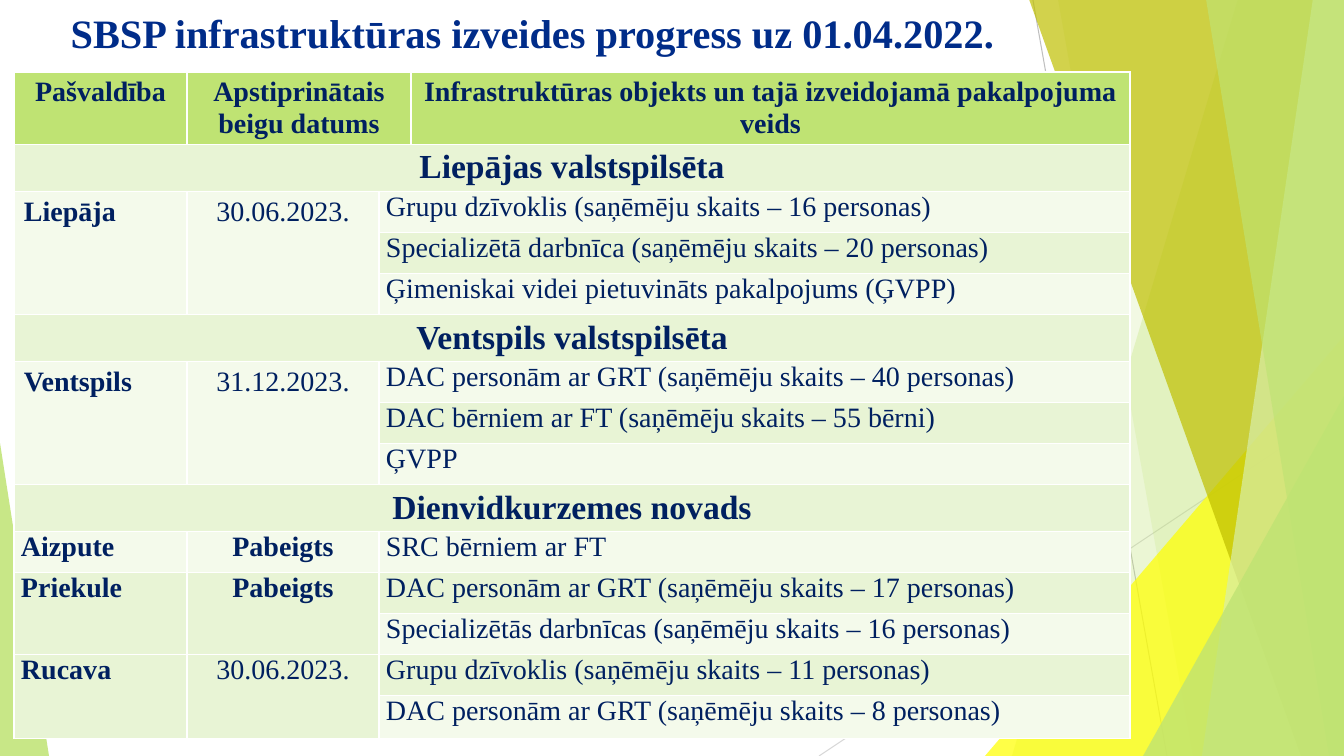
from dataclasses import dataclass

from lxml.etree import SubElement
from pptx import Presentation
from pptx.dml.color import RGBColor
from pptx.enum.shapes import MSO_CONNECTOR as Connector, MSO_SHAPE as Shape
from pptx.enum.text import MSO_ANCHOR as Anchor, PP_ALIGN as Align
from pptx.oxml.ns import qn
from pptx.util import Pt


@dataclass(frozen=True)
class Theme:
    font: str = "Times New Roman"
    title_size: float = 28.8
    section_size: float = 24
    body_size: float = 20
    title: str = "002C89"
    ink: str = "002060"
    green: str = "BFE373"
    pale_green: str = "D8EEAA"
    olive: str = "BFBF00"
    yellow: str = "FFFF00"
    odd_row: str = "E8F4D5"
    even_row: str = "F4FAEB"
    dark_line: str = "BFBFBF"
    light_line: str = "D8D8D8"


THEME = Theme()
WIDTH, HEIGHT = 1344, 756
COLUMNS = (173, 192, 32, 719)
HEADER_HEIGHT, SECTION_HEIGHT, OBJECT_HEIGHT, LAST_HEIGHT = 72, 47, 41, 43
ROOMY, TIGHT = (10, 5), (7, 0)

TITLE = "SBSP infrastruktūras izveides progress uz 01.04.2022."
HEADINGS = {
    0: "Pašvaldība",
    1: "Apstiprinātais beigu datums",
    3: "Infrastruktūras objekts un tajā izveidojamā pakalpojuma veids",
}
DONE = "Pabeigts"
# Section, insets of its places, places with end date and objects
SECTIONS = [
    ("Liepājas valstspilsēta", ROOMY, [
        ("Liepāja", "30.06.2023.", [
            "Grupu dzīvoklis (saņēmēju skaits – 16 personas)",
            "Specializētā darbnīca (saņēmēju skaits – 20 personas)",
            "Ģimeniskai videi pietuvināts pakalpojums (ĢVPP)"]),
    ]),
    ("Ventspils valstspilsēta", ROOMY, [
        ("Ventspils", "31.12.2023.", [
            "DAC personām ar GRT (saņēmēju skaits – 40 personas)",
            "DAC bērniem ar FT (saņēmēju skaits – 55 bērni)",
            "ĢVPP"]),
    ]),
    ("Dienvidkurzemes novads", TIGHT, [
        ("Aizpute", DONE, ["SRC bērniem ar FT"]),
        ("Priekule", DONE, [
            "DAC personām ar GRT (saņēmēju skaits – 17 personas)",
            "Specializētās darbnīcas (saņēmēju skaits – 16 personas)"]),
        ("Rucava", "30.06.2023.", [
            "Grupu dzīvoklis (saņēmēju skaits – 11 personas)",
            "DAC personām ar GRT (saņēmēju skaits – 8 personas)"]),
    ]),
]


def px(length):
    return round(length * 914400 / 100.8)


def rgb(color):
    return RGBColor.from_string(color)


def format_text(frame, size, color, bold=True, align=Align.LEFT):
    paragraph = frame.paragraphs[0]
    paragraph.alignment = align
    for run in paragraph.runs:
        run.font.name = THEME.font
        run.font.size = Pt(size)
        run.font.bold = bold
        run.font.color.rgb = rgb(color)


def paint(facet, color, opacity):
    facet.shadow.inherit = False
    facet.line.fill.background()
    facet.fill.solid()
    facet.fill.fore_color.rgb = rgb(color)
    tone = facet.fill._xPr.find(qn("a:solidFill"))[0]
    SubElement(tone, qn("a:alpha"), val=str(opacity * 1000))


def add_ray(slide, start, end, color):
    ray = slide.shapes.add_connector(Connector.STRAIGHT, *map(px, start + end))
    ray.line.color.rgb = rgb(color)
    ray.line.width = Pt(0.75)
    SubElement(ray._element.spPr, qn("a:effectLst"))


def add_panel(slide, top_x, bottom_x, color, opacity):
    """Full-height panel with a slanted left edge, reaching the right side."""
    builder = slide.shapes.build_freeform(px(top_x), px(-1))
    corners = [(WIDTH, -1), (WIDTH, HEIGHT), (bottom_x, HEIGHT)]
    builder.add_line_segments([(px(x), px(y)) for x, y in corners])
    paint(builder.convert_to_shape(), color, opacity)


def add_corner(slide, left, top, width, apex, color, opacity):
    """Triangle standing on the bottom edge of the slide."""
    corner = slide.shapes.add_shape(
        Shape.ISOSCELES_TRIANGLE, px(left), px(top), px(width), px(HEIGHT - top))
    corner.adjustments[0] = apex
    paint(corner, color, opacity)


def add_backdrop(slide):
    add_ray(slide, (1033, 0), (1167, HEIGHT), THEME.dark_line)
    add_ray(slide, (WIDTH, 406), (819, HEIGHT), THEME.light_line)
    add_panel(slide, 1238, 1012, THEME.green, 30)
    add_panel(slide, 1058, 1193, THEME.green, 20)
    add_corner(slide, 985, 336, 359, 1, THEME.yellow, 72)
    add_panel(slide, 1029, 1301, THEME.olive, 70)
    add_panel(slide, 1313, 1202, THEME.pale_green, 70)
    add_panel(slide, 1206, 1329, THEME.green, 65)
    add_corner(slide, 1143, 396, 201, 1, THEME.green, 80)
    add_corner(slide, 0, 443, 49, 0, THEME.green, 85)


def place_title(slide):
    title = slide.shapes.title
    title.left, title.top, title.width, title.height = map(px, (14, 0, 1037, 73))
    frame = title.text_frame
    frame.text = TITLE
    frame.word_wrap = True
    frame.vertical_anchor = Anchor.MIDDLE
    frame.paragraphs[0].line_spacing = 0.8
    format_text(frame, THEME.title_size, THEME.title, align=Align.CENTER)
    # Bring the title in front of the backdrop
    slide.shapes[-1]._element.addnext(title._element)


def write_cell(cell, text, size=THEME.body_size, inset=ROOMY, **style):
    cell.text = text
    cell.margin_left = cell.margin_right = px(inset[0])
    cell.margin_top = cell.margin_bottom = px(inset[1])
    format_text(cell.text_frame, size, THEME.ink, **style)


def write_place(table, row, place, deadline, objects, inset):
    last = row + len(objects) - 1
    if last > row:
        for column in (0, 1):
            table.cell(row, column).merge(table.cell(last, column))
    write_cell(table.cell(row, 0), place, inset=inset)
    write_cell(table.cell(row, 1), deadline, inset=inset,
               bold=deadline == DONE, align=Align.CENTER)
    for object_row, service in enumerate(objects, row):
        table.cell(object_row, 2).merge(table.cell(object_row, 3))
        write_cell(table.cell(object_row, 2), service, inset=TIGHT, bold=False)
    return last + 1


def add_progress_table(slide):
    heights = [HEADER_HEIGHT]
    for _, _, places in SECTIONS:
        heights.append(SECTION_HEIGHT)
        heights += [OBJECT_HEIGHT for place in places for _ in place[2]]
    heights[-1] = LAST_HEIGHT
    table = slide.shapes.add_table(
        len(heights), len(COLUMNS), px(14), px(72),
        px(sum(COLUMNS)), px(sum(heights))).table
    for column, width in zip(table.columns, COLUMNS):
        column.width = px(width)

    # Row heights and bands
    for index, (row, height) in enumerate(zip(table.rows, heights)):
        row.height = px(height)
        band = THEME.odd_row if index % 2 else THEME.even_row
        for cell in row.cells:
            cell.fill.solid()
            cell.fill.fore_color.rgb = rgb(band if index else THEME.green)

    # Header
    table.cell(0, 1).merge(table.cell(0, 2))
    for column, heading in HEADINGS.items():
        write_cell(table.cell(0, column), heading, align=Align.CENTER)

    # Sections with their places
    row = 1
    for section, inset, places in SECTIONS:
        table.cell(row, 0).merge(table.cell(row, 3))
        write_cell(table.cell(row, 0), section, THEME.section_size,
                   align=Align.CENTER)
        row += 1
        for place, deadline, objects in places:
            row = write_place(table, row, place, deadline, objects, inset)


def main():
    deck = Presentation()
    deck.slide_width, deck.slide_height = px(WIDTH), px(HEIGHT)
    slide = deck.slides.add_slide(deck.slide_layouts[5])
    add_backdrop(slide)
    place_title(slide)
    add_progress_table(slide)
    deck.save("out.pptx")


if __name__ == "__main__":
    main()
